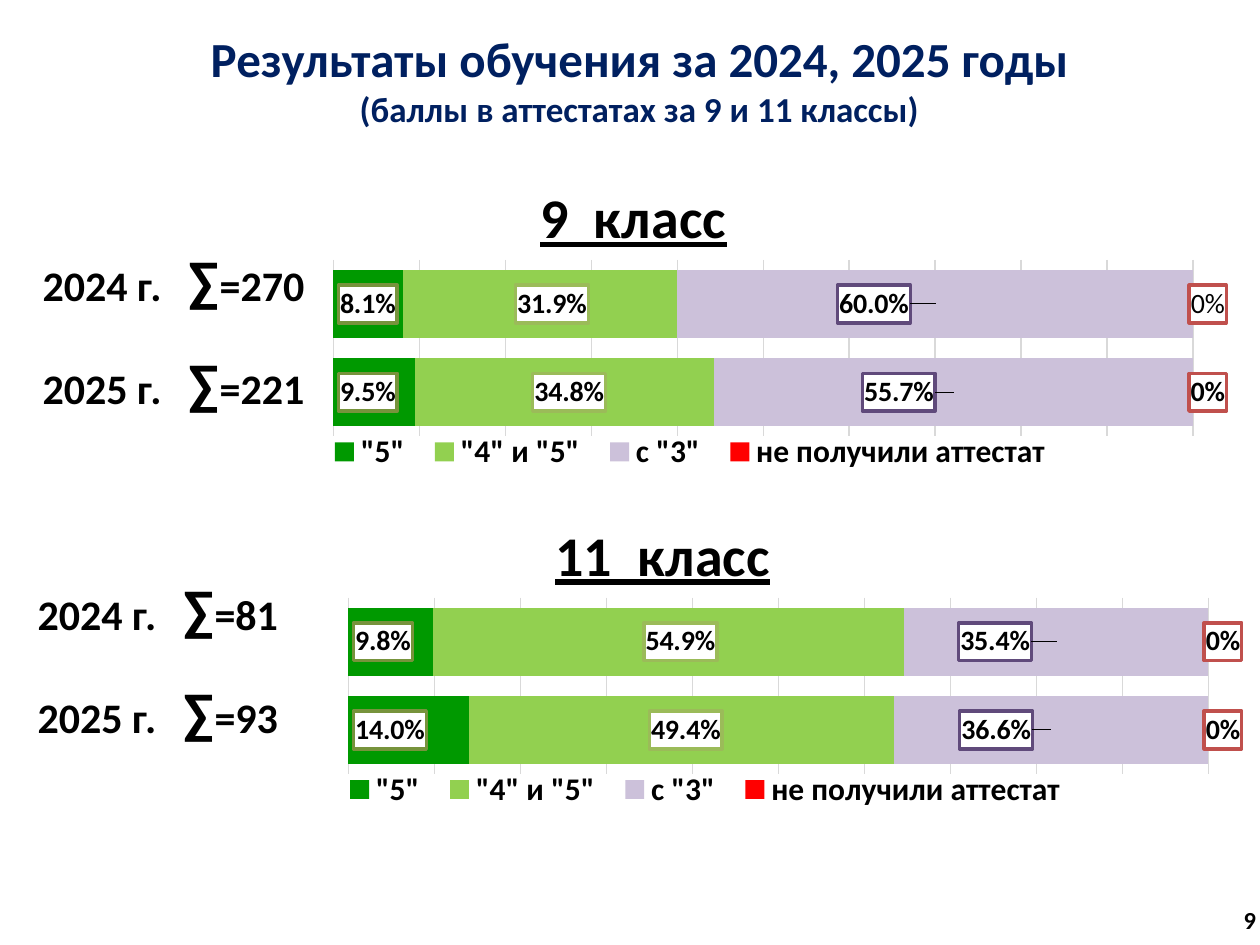
from dataclasses import dataclass

import lxml.etree
import pptx
import pptx.chart.data
import pptx.dml.color
import pptx.enum.chart
import pptx.enum.text
import pptx.oxml
import pptx.oxml.ns
import pptx.util

Inches = pptx.util.Inches
Position = pptx.enum.chart.XL_LABEL_POSITION
Align = pptx.enum.text.PP_ALIGN
qn = pptx.oxml.ns.qn


@dataclass(frozen=True)
class Theme:
    font: str = "Calibri"
    title: str = "002060"
    text: str = "000000"
    grid: str = "D9D9D9"
    label_fill: str = "FFFFFF"
    title_size: int = 28
    subtitle_size: int = 20
    heading_size: int = 32
    total_size: int = 24
    legend_size: int = 18
    label_size: int = 16
    page_size: int = 14


THEME = Theme()

# Series: name, fill, label border, label position, label offsets, number format
SERIES = [
    ('"5"', "009900", "77933C", Position.INSIDE_BASE, (0, 0), "0.0%"),
    ('"4" и "5"', "92D050", "9BBB59", Position.CENTER, (0.005, 0.013), "0.0%"),
    ('с "3"', "CCC1DA", "604A7B", Position.CENTER, (-0.06, -0.067), "0.0%"),
    ("не получили аттестат", "FF0000", "C0504D", Position.CENTER,
     (0.016, 0.016), "0%"),
]

# Each class: heading, chart corner, left of totals, totals by year,
# shares by series (2025, 2024), zero label of 2024 in bold
CLASSES = [
    ("9  класс", (2.5, 1.07), 0.24, (("2024 г.", 270), ("2025 г.", 221)),
     ((0.095, 0.081), (0.348, 0.319), (0.557, 0.6), (0, 0)), False),
    ("11  класс", (2.62, 3.75), 0.2, (("2024 г.", 81), ("2025 г.", 93)),
     ((0.14, 0.098), (0.494, 0.549), (0.366, 0.354), (0, 0)), True),
]


def rgb(color):
    return pptx.dml.color.RGBColor.from_string(color)


def style_font(font, size, color=THEME.text, **extra):
    values = {"name": THEME.font, "size": pptx.util.Pt(size), "bold": True, **extra}
    for name, value in values.items():
        setattr(font, name, value)
    font.color.rgb = rgb(color)


def add_span(para, text, size, color=THEME.text):
    span = para.add_run()
    span.text = text
    style_font(span.font, size, color)


def add_box(slide, left, top, width, height):
    box = slide.shapes.add_textbox(
        Inches(left), Inches(top), Inches(width), Inches(height))
    box.text_frame.word_wrap = True
    return box


def add_title(slide):
    title = slide.shapes.title
    place = {"left": 0.51, "top": 0.17, "width": 9.13, "height": 0.91}
    for name, value in place.items():
        setattr(title, name, Inches(value))
    frame = title.text_frame
    frame.auto_size = pptx.enum.text.MSO_AUTO_SIZE.NONE
    lines = [("Результаты обучения за 2024, 2025 годы", THEME.title_size),
             ("(баллы в аттестатах за 9 и 11 классы)", THEME.subtitle_size)]
    for number, (text, size) in enumerate(lines):
        para = frame.add_paragraph() if number else frame.paragraphs[0]
        para.alignment = Align.CENTER
        para.space_before = pptx.util.Pt(0)
        add_span(para, text, size, THEME.title)


def add_total(slide, left, top, year, total):
    para = add_box(slide, left, top, 2.65, 0.64).text_frame.paragraphs[0]
    # The tab stop lines up the sum signs
    tabs = lxml.etree.SubElement(para._p.get_or_add_pPr(), qn("a:tabLst"))
    lxml.etree.SubElement(tabs, qn("a:tab"), pos=str(Inches(1.16)), algn="l")
    add_span(para, f"{year}\t", THEME.total_size)
    add_span(para, "∑", THEME.heading_size)
    add_span(para, f"={total}", THEME.total_size)


def set_layout(element, index, inner=False, **values):
    """Give a chart part a manual place, in fractions of the chart."""
    for old in element.findall(qn("c:layout")):
        element.remove(old)
    layout = lxml.etree.Element(qn("c:layout"))
    manual = lxml.etree.SubElement(layout, qn("c:manualLayout"))
    if inner:
        lxml.etree.SubElement(manual, qn("c:layoutTarget"), val="inner")
    if "w" in values or inner or element.tag == qn("c:title"):
        for mode in ("xMode", "yMode"):
            lxml.etree.SubElement(manual, qn(f"c:{mode}"), val="edge")
    for name, value in values.items():
        lxml.etree.SubElement(manual, qn(f"c:{name}"), val=str(value))
    element.insert(index, layout)


def style_label(label, border, position, offset, bold):
    style_font(label.font, THEME.label_size, bold=bold)
    label.position = position
    element = label._dLbl
    if offset:
        set_layout(element, 1, x=offset, y=0)
    element.find(qn("c:txPr")).addprevious(pptx.oxml.parse_xml(
        f'<c:spPr {pptx.oxml.ns.nsdecls("c", "a")}>'
        f'<a:solidFill><a:srgbClr val="{THEME.label_fill}"/></a:solidFill>'
        f'<a:ln w="25400"><a:solidFill><a:srgbClr val="{border}"/></a:solidFill></a:ln>'
        '</c:spPr>'))


def style_axes(chart):
    chart.category_axis.visible = False
    axis = chart.value_axis
    values = {"visible": False, "minimum_scale": 0, "maximum_scale": 1,
              "major_unit": 0.1, "has_major_gridlines": True}
    for name, value in values.items():
        setattr(axis, name, value)
    line = axis.major_gridlines.format.line
    line.color.rgb = rgb(THEME.grid)
    line.width = pptx.util.Pt(0.75)


def add_grades_chart(slide, heading, corner, shares, zero_bold):
    data = pptx.chart.data.CategoryChartData()
    data.categories = ["1", "2"]
    for (name, *_, number_format), values in zip(SERIES, shares):
        data.add_series(name, values, number_format)
    left, top = corner
    chart = slide.shapes.add_chart(
        pptx.enum.chart.XL_CHART_TYPE.BAR_STACKED_100, Inches(left), Inches(top),
        Inches(7.26), Inches(2.92), data).chart
    style_font(chart.font, 10, bold=False)
    style_axes(chart)

    # Heading
    chart.has_title = True
    para = chart.chart_title.text_frame.paragraphs[0]
    add_span(para, heading, THEME.heading_size)
    para.runs[0].font.underline = True
    set_layout(chart.chart_title._element, 1, x=0.235, y=0.09)

    # Legend
    chart.has_legend = True
    chart.legend.position = pptx.enum.chart.XL_LEGEND_POSITION.BOTTOM
    chart.legend.include_in_layout = False
    style_font(chart.legend.font, THEME.legend_size)
    set_layout(chart.legend._element, 1, x=0.0, y=0.81, w=0.82, h=0.1)

    # Bars and their boxed labels
    plot = chart.plots[0]
    for name, value in {"gap_width": 30, "overlap": 100,
                        "vary_by_categories": False}.items():
        setattr(plot, name, value)
    set_layout(plot._element.getparent(), 0, inner=True,
               x=0.02, y=0.34, w=0.94, h=0.48)
    for series, (_, color, border, position, offsets, _) in zip(plot.series, SERIES):
        series.format.fill.solid()
        series.format.fill.fore_color.rgb = rgb(color)
        for number, offset in enumerate(offsets):
            is_zero = series.name == SERIES[-1][0] and number == 1
            bold = zero_bold if is_zero else True
            style_label(series.points[number].data_label, border, position,
                        offset, bold)


def add_page_number(slide, number):
    frame = add_box(slide, 9.7, 7.1, 0.27, 0.4).text_frame
    values = {"margin_left": 0, "margin_right": 0, "word_wrap": False,
              "vertical_anchor": pptx.enum.text.MSO_ANCHOR.MIDDLE}
    for name, value in values.items():
        setattr(frame, name, value)
    frame.paragraphs[0].alignment = Align.RIGHT
    add_span(frame.paragraphs[0], str(number), THEME.page_size)


def main():
    deck = pptx.Presentation()
    deck.slide_width, deck.slide_height = Inches(10), Inches(7.5)
    slide = deck.slides.add_slide(deck.slide_layouts[5])
    add_title(slide)
    for heading, corner, left, totals, shares, zero_bold in CLASSES:
        add_grades_chart(slide, heading, corner, shares, zero_bold)
        first_top = corner[1] + (0.83 if corner[1] < 2 else 0.76)
        for row, (year, total) in enumerate(totals):
            add_total(slide, left, first_top + row * 0.82, year, total)
    add_page_number(slide, 9)
    deck.save("out.pptx")


if __name__ == "__main__":
    main()
